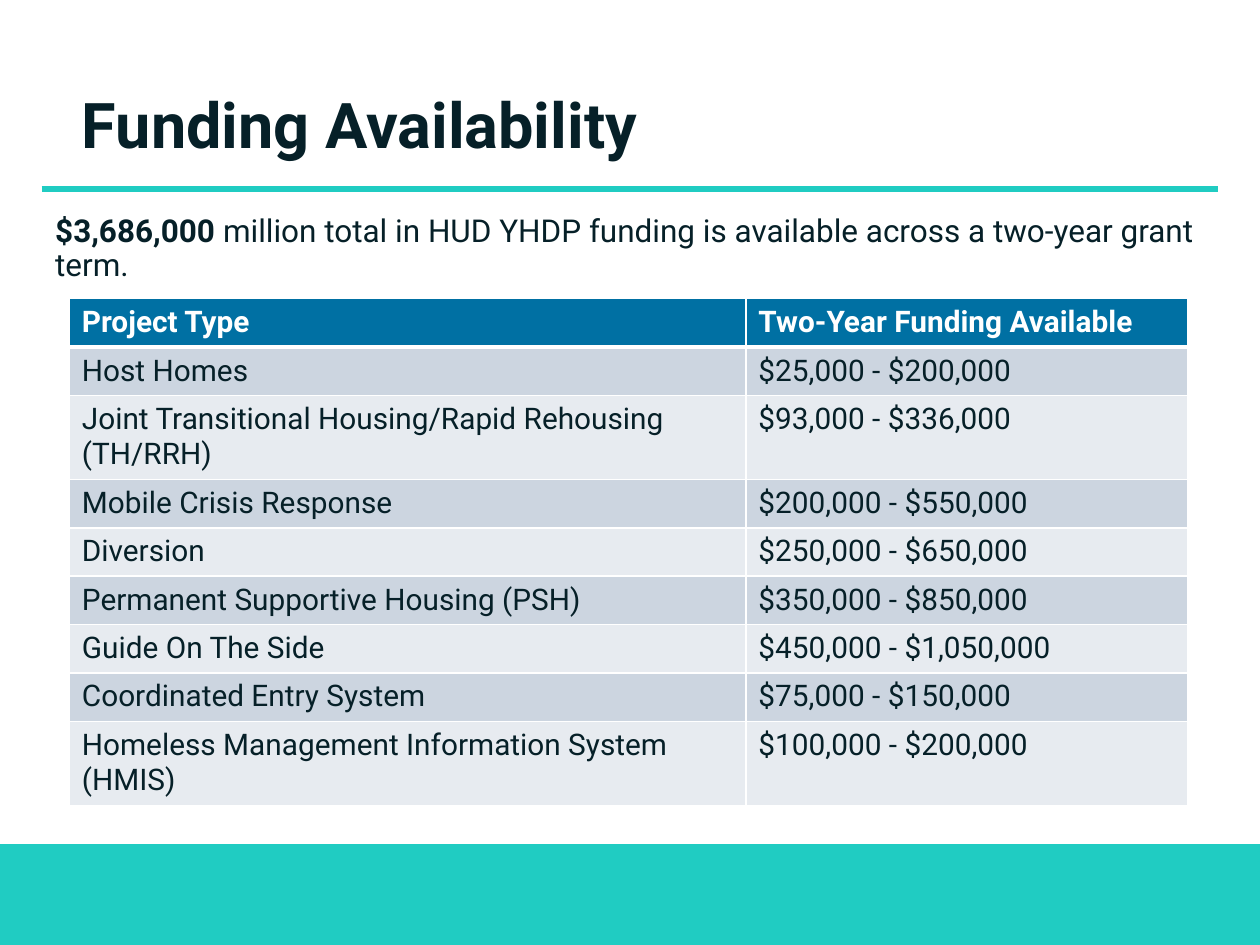
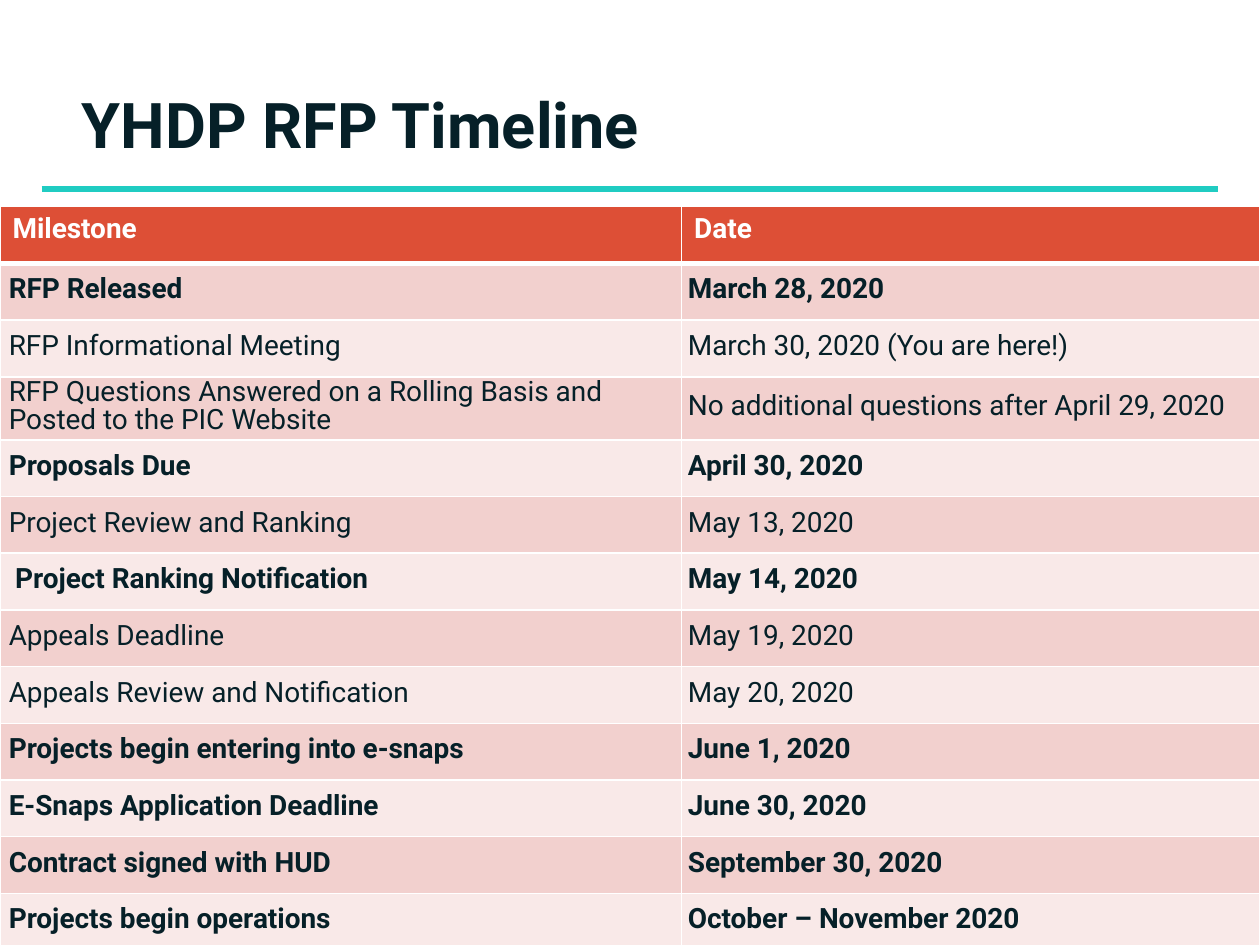
from dataclasses import dataclass

from pptx import Presentation
from pptx.dml.color import RGBColor
from pptx.enum.shapes import MSO_CONNECTOR as Link, MSO_SHAPE as Shape
from pptx.enum.text import MSO_ANCHOR as Anchor, MSO_AUTO_SIZE as Fit, PP_ALIGN as Align
from pptx.oxml.ns import qn
from pptx.util import Inches, Pt
from lxml.etree import SubElement

FONT = "Roboto"
INK = "062028"
TEAL = "20CCC2"
WHITE = "FFFFFF"


@dataclass(frozen=True)
class Row:
    name: str
    value: str
    high: float
    bold: bool = False
    lead: float = 0
    inset: float = 0.07


@dataclass(frozen=True)
class Grid:
    left: float
    top: float
    cols: tuple[float, float]
    size: float
    head: str
    bands: tuple[str, str]
    rows: tuple[Row, ...]


FUNDS = Grid(0.55, 2.37, (5.37, 3.51), 17, "0070A3", ("CCD5E0", "E7EBF0"), (
    Row("Project Type", "Two-Year Funding Available", 0.36, True),
    Row("Host Homes", "$25,000 - $200,000", 0.36),
    Row("Joint Transitional Housing/Rapid Rehousing (TH/RRH)", "$93,000 - $336,000", 0.62),
    Row("Mobile Crisis Response", "$200,000 - $550,000", 0.36),
    Row("Diversion", "$250,000 - $650,000", 0.36),
    Row("Permanent Supportive Housing (PSH)", "$350,000 - $850,000", 0.36),
    Row("Guide On The Side", "$450,000 - $1,050,000", 0.36),
    Row("Coordinated Entry System", "$75,000 - $150,000", 0.36),
    Row("Homeless Management Information System (HMIS)", "$100,000 - $200,000", 0.38),
))

DATES = Grid(0, 1.64, (5.41, 4.59), 16, "DD4F36", ("F2D0CE", "F9E9E8"), (
    Row("Milestone", "Date", 0.45, True),
    Row("RFP Released", "March 28, 2020", 0.45, True, 15.1),
    Row("RFP Informational Meeting", "March 30, 2020 (You are here!)", 0.45, False, 16),
    Row("RFP Questions Answered on a Rolling Basis and Posted to the PIC Website",
        "No additional questions after April 29, 2020", 0.5, False, 16),
    Row("Proposals Due", "April 30, 2020", 0.45, True, 16),
    Row("Project Review and Ranking", "May 13, 2020", 0.45, False, 16),
    Row("Project Ranking Notification", "May 14, 2020", 0.45, True, 16, 0.12),
    Row("Appeals Deadline", "May 19, 2020", 0.45, False, 16),
    Row("Appeals Review and Notification", "May 20, 2020", 0.45, False, 16),
    Row("Projects begin entering into e-snaps", "June 1, 2020", 0.45, True, 16),
    Row("E-Snaps Application Deadline", "June 30, 2020", 0.45, True, 16),
    Row("Contract signed with HUD", "September 30, 2020", 0.45, True, 15.8),
    Row("Projects begin operations", "October – November 2020", 0.45, True, 15.1),
))


def paint(code: str) -> RGBColor:
    return RGBColor.from_string(code)


def style(run, size: float, bold: bool, code: str = INK) -> None:
    run.font.name = FONT
    run.font.size = Pt(size)
    run.font.bold = bold
    run.font.color.rgb = paint(code)


def start(deck, title: str):
    slide = deck.slides.add_slide(deck.slide_layouts[5])
    head = slide.shapes.title
    head.left, head.top, head.width, head.height = map(Inches, (0.55, 0.23, 8.9, 1.11))
    frame = head.text_frame
    frame.text = title
    frame.auto_size = Fit.NONE
    frame.vertical_anchor = Anchor.BOTTOM
    para = frame.paragraphs[0]
    para.alignment = Align.LEFT
    para.line_spacing = 0.9
    style(para.runs[0], 36, True)

    rule = slide.shapes.add_connector(
        Link.STRAIGHT, Inches(0.33), Inches(1.5), Inches(9.67), Inches(1.5))
    rule.line.color.rgb = paint(TEAL)
    rule.line.width = Pt(4)
    SubElement(rule._element.spPr, qn("a:effectLst"))

    band = slide.shapes.add_shape(
        Shape.RECTANGLE, Inches(0), Inches(6.7), Inches(10), Inches(0.8))
    band.shadow.inherit = False
    band.fill.solid()
    band.fill.fore_color.rgb = paint(TEAL)
    band.line.fill.background()
    return slide


def edge(cell, row: int) -> None:
    thick = {0: "lnB", 1: "lnT"}.get(row)
    props = cell._tc.get_or_add_tcPr()
    for side in ("lnL", "lnR", "lnT", "lnB"):
        width = Pt(3 if side == thick else 1)
        line = SubElement(props, qn(f"a:{side}"), w=str(width))
        fill = SubElement(line, qn("a:solidFill"))
        SubElement(fill, qn("a:srgbClr"), val=WHITE)


def draw(slide, grid: Grid) -> None:
    high = sum(row.high for row in grid.rows)
    table = slide.shapes.add_table(
        len(grid.rows), 2, Inches(grid.left), Inches(grid.top),
        Inches(sum(grid.cols)), Inches(high)).table
    table.horz_banding = False
    for col, width in zip(table.columns, grid.cols):
        col.width = Inches(width)
    for i, row in enumerate(grid.rows):
        table.rows[i].height = Inches(row.high)
        back = grid.bands[(i - 1) % 2] if i else grid.head
        for j, text in enumerate((row.name, row.value)):
            cell = table.cell(i, j)
            edge(cell, i)
            cell.fill.solid()
            cell.fill.fore_color.rgb = paint(back)
            cell.text_frame.text = text
            para = cell.text_frame.paragraphs[0]
            style(para.runs[0], grid.size, row.bold, INK if i else WHITE)
            if row.lead:
                cell.vertical_anchor = Anchor.MIDDLE
                cell.margin_top = cell.margin_right = cell.margin_bottom = 0
                cell.margin_left = Inches(0.05 if j else row.inset)
                para.line_spacing = Pt(row.lead)


def intro(slide) -> None:
    box = slide.shapes.add_textbox(Inches(0.34), Inches(1.66), Inches(9.43), Inches(4.1))
    box.text_frame.word_wrap = True
    para = box.text_frame.paragraphs[0]
    para.line_spacing = 0.9
    for text, bold in (
        ("$3,686,000 ", True),
        ("million total in HUD YHDP funding is available across a two-year grant term.", False),
    ):
        run = para.add_run()
        run.text = text
        style(run, 18, bold)


def main() -> None:
    deck = Presentation()
    deck.slide_width, deck.slide_height = Inches(10), Inches(7.5)
    slide = start(deck, "Funding Availability")
    intro(slide)
    draw(slide, FUNDS)
    draw(start(deck, "YHDP RFP Timeline"), DATES)
    deck.save("out.pptx")


if __name__ == "__main__":
    main()
